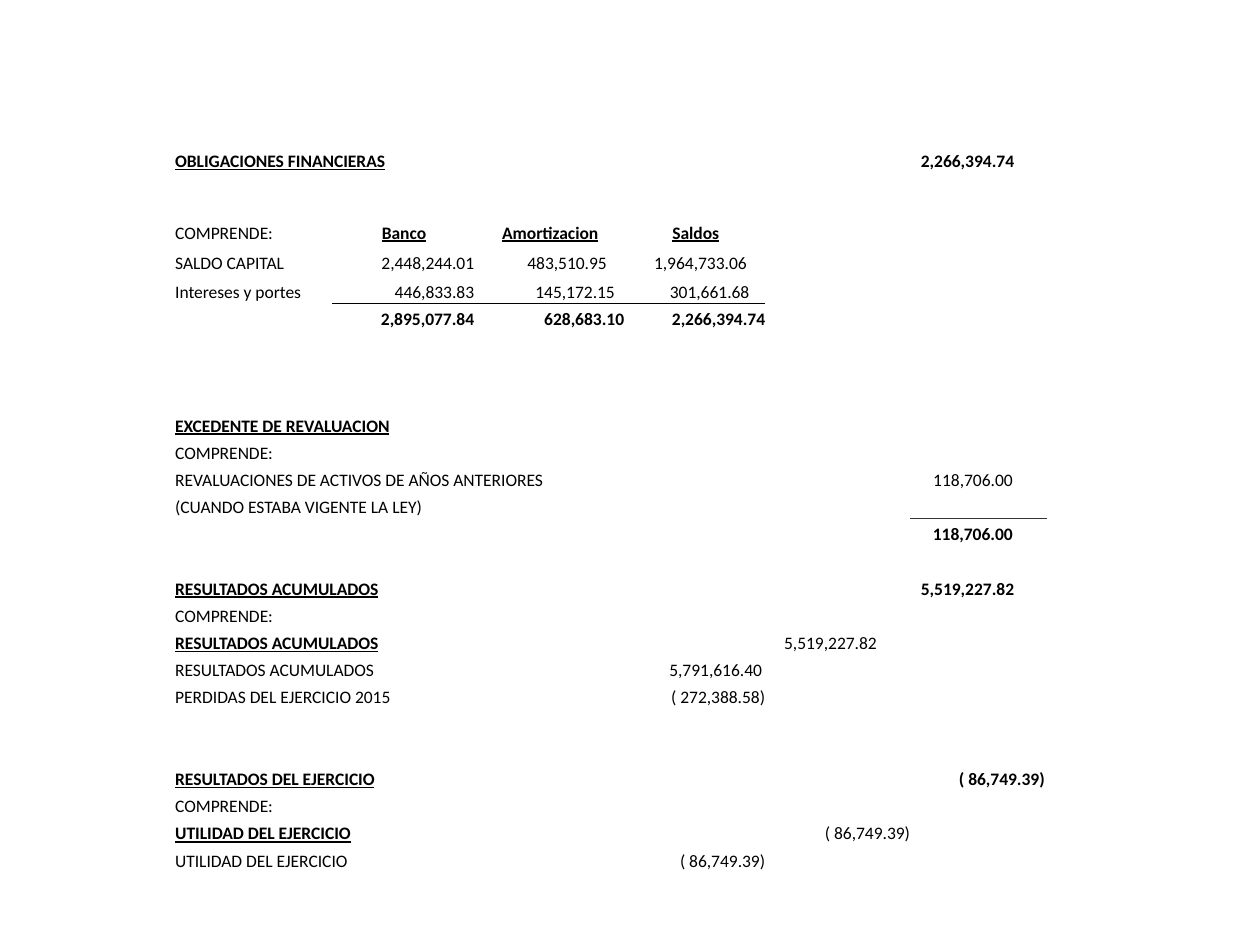
from lxml.etree import SubElement
from pptx import Presentation
from pptx.dml.color import RGBColor
from pptx.enum.text import MSO_ANCHOR, PP_ALIGN
from pptx.oxml.ns import qn
from pptx.util import Pt

BLACK, GREY = "000000", "333333"
PLAIN = {"bold": False, "underline": False}
BOLD = {"bold": True, "underline": False}
HEADING = {"bold": True, "underline": True}

COL_WIDTHS = [59.8, 31, 81.4, 85.7, 80.6, 82.8, 77]
ROW_HEIGHTS = [15.6, 41, 17.3, 16.6, 15.6, 22.6, 22.6] + [15.54] * 17

# (row, columns spanned, text, style)
LABELS = [
    (0, 3, "OBLIGACIONES FINANCIERAS", HEADING),
    (1, 2, "COMPRENDE:", PLAIN),
    (2, 2, "SALDO CAPITAL", PLAIN),
    (3, 2, "Intereses y portes", PLAIN),
    (7, 3, "EXCEDENTE DE REVALUACION", HEADING),
    (8, 3, "COMPRENDE:", PLAIN),
    (9, 5, "REVALUACIONES DE ACTIVOS DE AÑOS ANTERIORES", PLAIN),
    (10, 4, "(CUANDO ESTABA VIGENTE LA LEY)", PLAIN),
    (13, 3, "RESULTADOS ACUMULADOS", HEADING),
    (14, 3, "COMPRENDE:", PLAIN),
    (15, 3, "RESULTADOS ACUMULADOS", HEADING),
    (16, 3, "RESULTADOS ACUMULADOS", PLAIN),
    (17, 3, "PERDIDAS DEL EJERCICIO 2015", PLAIN),
    (20, 3, "RESULTADOS DEL EJERCICIO", HEADING),
    (21, 3, "COMPRENDE:", PLAIN),
    (22, 3, "UTILIDAD DEL EJERCICIO", HEADING),
    (23, 3, "UTILIDAD DEL EJERCICIO", PLAIN),
]
COLUMN_HEADS = ["Banco", "Amortizacion", "Saldos"]

# (row, column, text, style, right margin)
AMOUNTS = [
    (0, 6, "2,266,394.74", BOLD, 18.2),
    (2, 2, "2,448,244.01", PLAIN, 0.7),
    (2, 3, "483,510.95", PLAIN, 10.6),
    (2, 4, "1,964,733.06", PLAIN, 11.2),
    (3, 2, "446,833.83", PLAIN, 0.7),
    (3, 3, "145,172.15", PLAIN, 6),
    (3, 4, "301,661.68", PLAIN, 9.7),
    (4, 2, "2,895,077.84", BOLD, 0.7),
    (4, 3, "628,683.10", BOLD, 0.7),
    (4, 4, "2,266,394.74", BOLD, 0.7),
    (9, 6, "118,706.00", PLAIN, 19),
    (11, 6, "118,706.00", BOLD, 19),
    (13, 6, "5,519,227.82", BOLD, 18.2),
    (15, 5, "5,519,227.82", PLAIN, 19.7),
    (16, 4, "5,791,616.40", PLAIN, 2.5),
    (17, 4, "( 272,388.58)", PLAIN, 0.7),
    (20, 6, "( 86,749.39)", BOLD, 0.7),
    (22, 5, "( 86,749.39)", PLAIN, 0.7),
    (23, 4, "( 86,749.39)", PLAIN, 0.7),
]
# (row above, column, colour)
TOTAL_LINES = [(3, 2, BLACK), (3, 3, BLACK), (3, 4, BLACK), (10, 6, GREY)]


def rgb(color):
    return RGBColor.from_string(color)


class StatementSlide:
    def __init__(self, prs):
        self.s = prs.slides.add_slide(prs.slide_layouts[6])
        self.font = {"name": "Calibri", "size": Pt(10)}
        self.margins = {"margin_left": Pt(0.7), "margin_right": Pt(0.7),
                        "margin_top": Pt(0.7), "margin_bottom": 0,
                        "vertical_anchor": MSO_ANCHOR.BOTTOM}

    def table(self, left, top, widths, heights):
        frame = self.s.shapes.add_table(len(heights), len(widths), Pt(left), Pt(top),
                                        Pt(sum(widths)), Pt(sum(heights)))
        self.tbl = frame.table
        self.tbl.first_row = self.tbl.horz_banding = False
        for col, width in zip(self.tbl.columns, widths):
            col.width = Pt(width)
        for row, height in zip(self.tbl.rows, heights):
            row.height = Pt(height)
        for cell in self.tbl.iter_cells():
            for key, value in self.margins.items():
                setattr(cell, key, value)
            cell.fill.background()
            # Keeps empty cells from stretching their row
            SubElement(cell.text_frame.paragraphs[0]._p, qn("a:endParaRPr"), sz="1000")

    def text(self, row, col, text, style, align=PP_ALIGN.LEFT, span=1, right=0.7):
        cell = self.tbl.cell(row, col)
        if span > 1:
            cell.merge(self.tbl.cell(row, col + span - 1))
        cell.margin_right = Pt(right)
        p = cell.text_frame.paragraphs[0]
        p.alignment = align
        r = p.add_run()
        r.text = text
        for key, value in {**self.font, **style}.items():
            setattr(r.font, key, value)
        r.font.color.rgb = rgb(BLACK)

    def line_below(self, row, col, color):
        """Rule the shared edge on both cells, so that neither hides it."""
        for r, tag in ((row, "a:lnB"), (row + 1, "a:lnT")):
            tcPr = self.tbl.cell(r, col)._tc.get_or_add_tcPr()
            ln = SubElement(tcPr, qn(tag), w=str(Pt(0.5)))
            tcPr.insert(0, ln)
            fill = SubElement(ln, qn("a:solidFill"))
            SubElement(fill, qn("a:srgbClr"), val=str(rgb(color)))


def main():
    prs = Presentation()
    prs.slide_width, prs.slide_height = Pt(720), Pt(540)
    slide = StatementSlide(prs)
    slide.table(99.4, 82.8, COL_WIDTHS, ROW_HEIGHTS)
    for row, span, text, style in LABELS:
        slide.text(row, 0, text, style, span=span)
    for col, text in enumerate(COLUMN_HEADS, start=2):
        slide.text(1, col, text, HEADING, PP_ALIGN.CENTER)
    for row, col, text, style, right in AMOUNTS:
        slide.text(row, col, text, style, PP_ALIGN.RIGHT, right=right)
    for row, col, color in TOTAL_LINES:
        slide.line_below(row, col, color)
    prs.save("out.pptx")


if __name__ == "__main__":
    main()
